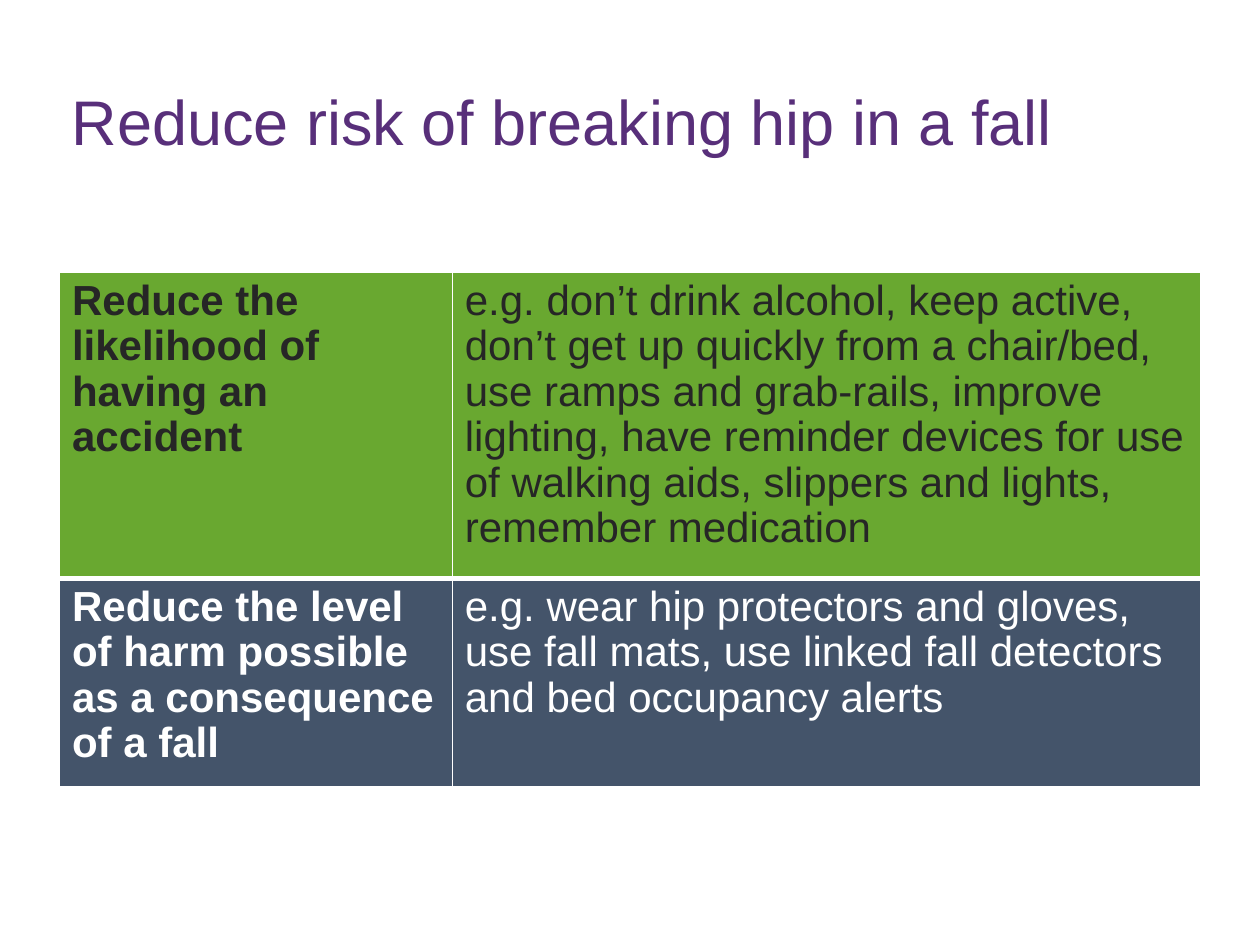
from lxml import etree
from pptx import Presentation
from pptx import util as u
from pptx.dml.color import RGBColor
from pptx.enum import text
from pptx.oxml import ns

COLORS = {
    "title": "582F7A",
    "dark": "262626",
    "white": "FFFFFF",
    "green": "69A830",
    "slate": "44546A",
}
LEFT, WIDTH = 34, 652

# Each row: action, examples, fill, text colour, height, bottom border width
ROWS = [
    ("Reduce the likelihood of having an accident",
     "e.g. don’t drink alcohol, keep active, don’t get up quickly from a chair/bed, "
     "use ramps and grab-rails, improve lighting, have reminder devices for use of "
     "walking aids, slippers and lights, remember medication",
     "green", "dark", 167, 3),
    ("Reduce the level of harm possible as a consequence of a fall",
     "e.g. wear hip protectors and gloves, use fall mats, use linked fall detectors "
     "and bed occupancy alerts",
     "slate", "white", 114, 1),
]


class SlideBuilder:
    font_name = "Arial"
    title_size = 36
    table_size = 24
    line_spacing = 0.97

    def __init__(self, slide):
        self.slide = slide

    def format_text(self, paragraph, size, color, bold=False):
        font = paragraph.font
        font.name = self.font_name
        font.size = u.Pt(size)
        font.bold = bold
        font.color.rgb = RGBColor.from_string(COLORS[color])

    def add_title(self, wording, left, top, width, height):
        box = self.slide.shapes.add_textbox(*map(u.Pt, (left, top, width, height)))
        frame = box.text_frame
        frame.word_wrap = True
        frame.vertical_anchor = text.MSO_ANCHOR.MIDDLE
        frame.text = wording
        self.format_text(frame.paragraphs[0], self.title_size, "title")

    def add_table(self, rows, left, top, column_widths):
        height = sum(row[4] for row in rows)
        shape = self.slide.shapes.add_table(
            len(rows), len(column_widths),
            *map(u.Pt, (left, top, sum(column_widths), height)))
        table = shape.table
        for column, width in zip(table.columns, column_widths):
            column.width = u.Pt(width)
        for index, (action, examples, fill, color, height, bottom) in enumerate(rows):
            table.rows[index].height = u.Pt(height)
            top_border = rows[index - 1][5] if index else 1
            borders = {"lnL": 1, "lnR": 1, "lnT": top_border, "lnB": bottom}
            for column, wording in enumerate((action, examples)):
                cell = table.cell(index, column)
                cell.text = wording
                paragraph = cell.text_frame.paragraphs[0]
                paragraph.line_spacing = self.line_spacing
                self.format_text(paragraph, self.table_size, color, bold=column == 0)
                self.set_borders(cell, borders)
                cell.fill.solid()
                cell.fill.fore_color.rgb = RGBColor.from_string(COLORS[fill])

    def set_borders(self, cell, borders):
        """Add white borders; must run before the cell's fill is set."""
        properties = cell._tc.get_or_add_tcPr()
        for position, (side, width) in enumerate(borders.items()):
            line = etree.Element(ns.qn(f"a:{side}"), w=str(u.Pt(width)))
            fill = etree.SubElement(line, ns.qn("a:solidFill"))
            etree.SubElement(fill, ns.qn("a:srgbClr"), val=COLORS["white"])
            properties.insert(position, line)


def main():
    presentation = Presentation()
    presentation.slide_width = u.Pt(720)
    presentation.slide_height = u.Pt(540)
    slide = presentation.slides.add_slide(presentation.slide_layouts[6])
    builder = SlideBuilder(slide)
    builder.add_title("Reduce risk of breaking hip in a fall", LEFT, 29, WIDTH, 79)
    first_column = 224.5
    builder.add_table(ROWS, LEFT, 155.75, (first_column, WIDTH - first_column))
    presentation.save("out.pptx")


if __name__ == "__main__":
    main()
